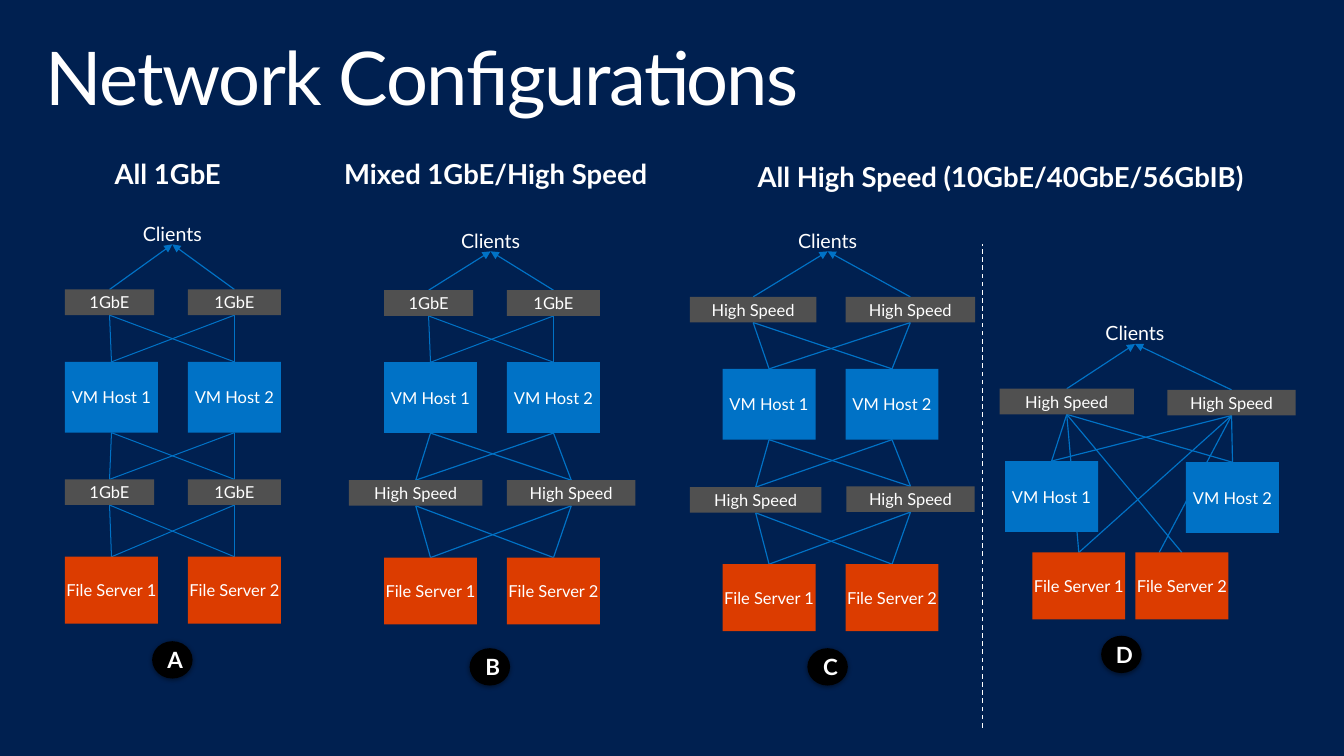
import itertools

import pptx
import pptx.dml.color
import pptx.enum.dml
import pptx.enum.shapes
import pptx.enum.text
import pptx.oxml
import pptx.oxml.ns
import pptx.util

Cm, Pt = pptx.util.Cm, pptx.util.Pt
ANCHOR, ALIGN = pptx.enum.text.MSO_ANCHOR, pptx.enum.text.PP_ALIGN
SHAPE = pptx.enum.shapes.MSO_SHAPE
TOP, BOTTOM = 0, 2  # connection sites of a rectangle

# Content: lengths in cm
TITLE = "Network Configurations"
HEADINGS = [  # text, left, top, width
    ("All 1GbE", 1.45, 4.13, 5.72),
    ("Mixed 1GbE/High Speed", 8.55, 4.14, 8.38),
    ("All High Speed (10GbE/40GbE/56GbIB)", 18.97, 4.22, 13.49),
]
NAVY, WHITE, BLUE, ORANGE, GRAY, BLACK = (
    "002050", "FFFFFF", "0072C6", "DC3C00", "505050", "000000")
HOST_WIDTH = 2.39
KINDS = {  # fill, height, labels
    "1GbE": (GRAY, 0.66, ("1GbE", "1GbE")),
    "High Speed": (GRAY, 0.66, ("High Speed", "High Speed")),
    "VM Host": (BLUE, 1.82, ("VM Host 1", "VM Host 2")),
    "File Server": (ORANGE, 1.72, ("File Server 1", "File Server 2")),
}
STACKED = [(0, 1), (1, 2), (2, 3)]  # each row linked with the next
# badge, (centre, top) of badge, (centre, top) of clients, linked rows, then
# rows of kind and (left, top, width) for both boxes
CONFIGURATIONS = [
    ("A", (4.43, 16.48), (4.43, 5.72), STACKED, [
        ("1GbE", (1.67, 7.44, 2.29), (4.83, 7.44, HOST_WIDTH)),
        ("VM Host", (1.67, 9.3, HOST_WIDTH), (4.83, 9.3, HOST_WIDTH)),
        ("1GbE", (1.67, 12.32, 2.29), (4.83, 12.32, HOST_WIDTH)),
        ("File Server", (1.67, 14.31, HOST_WIDTH), (4.83, 14.31, HOST_WIDTH))]),
    ("B", (12.59, 16.66), (12.61, 5.9), STACKED, [
        ("1GbE", (9.87, 7.46, 2.29), (13.03, 7.46, HOST_WIDTH)),
        ("VM Host", (9.87, 9.31, HOST_WIDTH), (13.03, 9.31, HOST_WIDTH)),
        ("High Speed", (8.97, 12.34, 3.43), (13.03, 12.34, 3.3)),
        ("File Server", (9.87, 14.33, HOST_WIDTH), (13.03, 14.33, HOST_WIDTH))]),
    ("C", (21.27, 16.66), (21.27, 5.9), STACKED, [
        ("High Speed", (17.73, 7.63, 3.25), (21.73, 7.63, 3.33)),
        ("VM Host", (18.57, 9.48, HOST_WIDTH), (21.73, 9.48, HOST_WIDTH)),
        ("High Speed", (17.73, 12.52, 3.38), (21.75, 12.5, 3.3)),
        ("File Server", (18.57, 14.5, HOST_WIDTH), (21.73, 14.5, HOST_WIDTH))]),
    ("D", (28.82, 16.34), (29.17, 8.28), [(0, 1), (0, 2)], [
        ("High Speed", (25.69, 9.99, 3.45), (30, 10.02, 3.3)),
        ("VM Host", (25.83, 11.85, HOST_WIDTH), (30.48, 11.88, HOST_WIDTH)),
        ("File Server", (26.53, 14.2, HOST_WIDTH), (29.18, 14.2, HOST_WIDTH))]),
]
# Links that land beside the middle: badge, lower row, upper box, lower box
LANDINGS = {("D", 2, 1, 1): 29.79}
DIVIDER = (25.25, 6.27, 18.7)  # x, top, bottom
SHADOW = ('<a:outerShdw %s blurRad="44450" dist="13970" dir="5400000">'
          '<a:srgbClr val="000000"><a:alpha val="45000"/></a:srgbClr>'
          '</a:outerShdw>' % pptx.oxml.ns.nsdecls("a"))


def rgb(hex_code):
    return pptx.dml.color.RGBColor.from_string(hex_code)


def put_text(shape, text, size=12, bold=False, align=ALIGN.CENTER,
             anchor=ANCHOR.MIDDLE, margins=(0, 0, 0, 0), leading=None,
             wrap=True, tracking=None):
    frame = shape.text_frame
    frame.auto_size = pptx.enum.text.MSO_AUTO_SIZE.NONE
    frame.word_wrap = wrap
    frame.vertical_anchor = anchor
    (frame.margin_left, frame.margin_top,
     frame.margin_right, frame.margin_bottom) = map(Cm, margins)
    paragraph = frame.paragraphs[0]
    paragraph.alignment = align
    paragraph.line_spacing = leading
    run = paragraph.add_run()
    run.text = text
    run.font.name, run.font.size, run.font.bold = "Lato", Pt(size), bold
    run.font.color.rgb = rgb(WHITE)
    if tracking is not None:
        run.font._element.set("spc", str(tracking))


def add_solid(slide, preset, fill, *box):
    solid = slide.shapes.add_shape(preset, *map(Cm, box))
    solid.shadow.inherit = False
    solid.fill.solid()
    solid.fill.fore_color.rgb = rgb(fill)
    solid.line.fill.background()
    return solid


def add_line(slide, ends, color=BLUE, width=0.85, arrow=False):
    line = slide.shapes.add_connector(
        pptx.enum.shapes.MSO_CONNECTOR.STRAIGHT, *ends)
    line.line.color.rgb = rgb(color)
    line.line.width = Pt(width)
    properties = line.element.spPr
    if arrow:
        outline = properties.find(pptx.oxml.ns.qn("a:ln"))
        outline.append(pptx.oxml.parse_xml(
            '<a:tailEnd %s type="triangle"/>' % pptx.oxml.ns.nsdecls("a")))
    properties.append(pptx.oxml.parse_xml(
        "<a:effectLst %s/>" % pptx.oxml.ns.nsdecls("a")))
    return line


def link(slide, start, start_site, end, end_site, landing=None, **look):
    landing_x = 0 if landing is None else Cm(landing)
    line = add_line(slide, (0, 0, landing_x, end.top), **look)
    line.begin_connect(start, start_site)
    if landing is None:
        line.end_connect(end, end_site)
    # Links run behind the boxes
    line.element.getparent().insert(2, line.element)


def add_configuration(slide, badge, badge_at, clients_at, linked_rows, rows):
    # Boxes
    boxes = []
    for kind, *places in rows:
        fill, height, labels = KINDS[kind]
        pair = []
        for label, place in zip(labels, places):
            box = add_solid(slide, SHAPE.RECTANGLE, fill, *place, height)
            put_text(box, label, wrap=False)
            pair.append(box)
        boxes.append(pair)

    # Clients and their arrows
    centre, top = clients_at
    clients = slide.shapes.add_textbox(
        Cm(centre - 1.435), Cm(top), Cm(2.87), Cm(0.56))
    put_text(clients, "Clients", size=14.3)
    for switch in boxes[0]:
        link(slide, switch, TOP, clients, BOTTOM, arrow=True)

    # Every box of the upper row to every box of the lower one
    for upper, lower in linked_rows:
        fast = "High Speed" in (rows[upper][0], rows[lower][0])
        for i, j in itertools.product(range(2), repeat=2):
            link(slide, boxes[upper][i], BOTTOM, boxes[lower][j], TOP,
                 landing=LANDINGS.get((badge, lower, i, j)),
                 width=0.85 if fast else 0.75)

    # Badge
    centre, top = badge_at
    disc = add_solid(slide, SHAPE.OVAL, BLACK, centre - 0.52, top, 1.04, 0.96)
    disc.element.spPr.find(pptx.oxml.ns.qn("a:effectLst")).append(
        pptx.oxml.parse_xml(SHADOW))
    put_text(disc, badge, size=16.3, bold=True, margins=(0.15, 0, 0, 0),
             wrap=False)


def main():
    deck = pptx.Presentation()
    deck.slide_width, deck.slide_height = Cm(34.54), Cm(19.43)
    slide = deck.slides.add_slide(deck.slide_layouts[5])
    slide.background.fill.solid()
    slide.background.fill.fore_color.rgb = rgb(NAVY)

    # Title and headings
    title = slide.shapes.title
    title.left, title.top, title.width, title.height = map(
        Cm, (0.76, 0.81, 33.02, 2.54))
    put_text(title, TITLE, size=54, align=ALIGN.LEFT, anchor=ANCHOR.TOP,
             margins=(0.41, 0.25, 0.41, 0.25), leading=0.9, tracking=-100)
    for text, left, top, width in HEADINGS:
        heading = slide.shapes.add_textbox(Cm(left), Cm(top), Cm(width), Cm(1))
        put_text(heading, text, size=20, bold=True, anchor=ANCHOR.TOP,
                 leading=0.9)

    for configuration in CONFIGURATIONS:
        add_configuration(slide, *configuration)

    # Divider between C and D
    x, top, bottom = map(Cm, DIVIDER)
    divider = add_line(slide, (x, bottom, x, top), color=WHITE)
    divider.line.dash_style = pptx.enum.dml.MSO_LINE.DASH

    deck.save("out.pptx")


if __name__ == "__main__":
    main()
